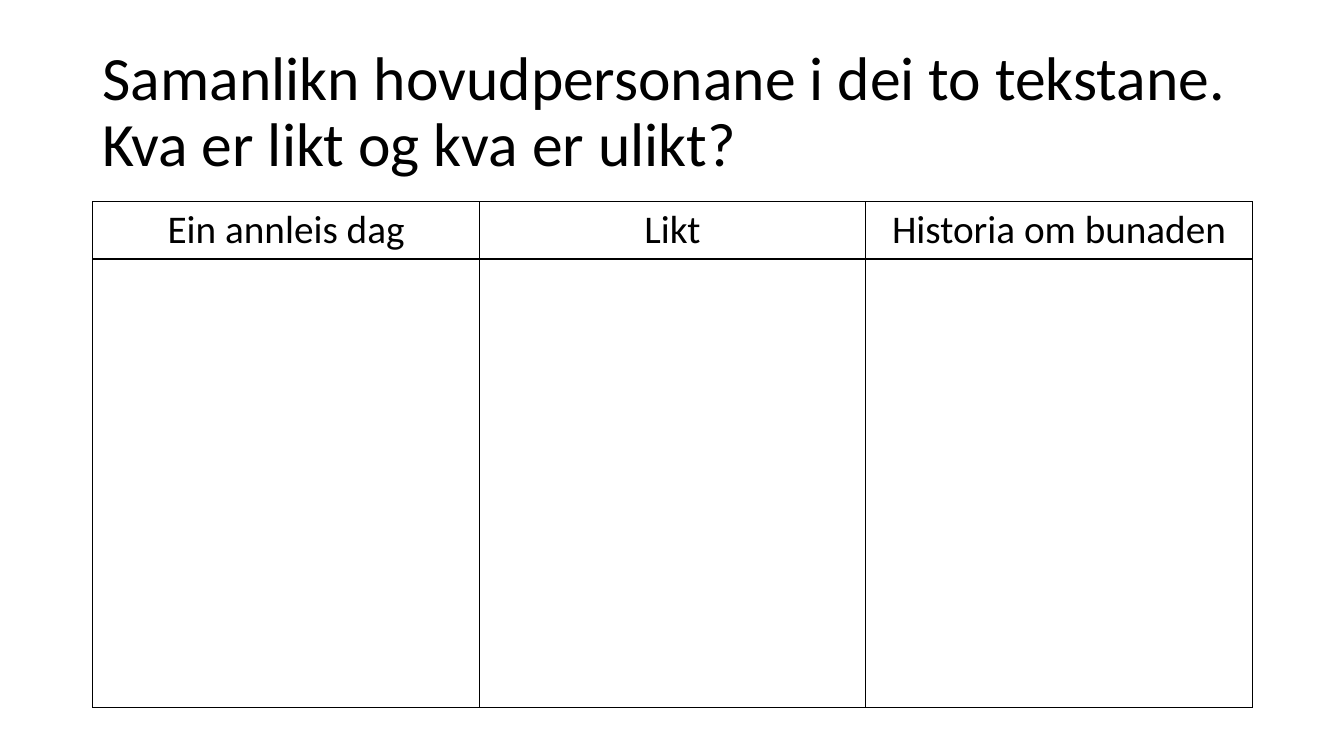
from pptx import Presentation
from pptx.dml.color import RGBColor
from pptx.enum.text import MSO_ANCHOR, PP_ALIGN
from pptx.oxml import parse_xml
from pptx.oxml.ns import nsdecls
from pptx.util import Inches, Pt

# Content
TITLE = "Samanlikn hovudpersonane i dei to tekstane.\vKva er likt og kva er ulikt?"
HEADERS = ["Ein annleis dag", "Likt", "Historia om bunaden"]

# Style and layout
FONT = "Calibri"
BLACK = RGBColor(0, 0, 0)
LEFT, WIDTH = 0.92, 11.5
TABLE_TOP = 2
ROW_HEIGHTS = [0.57, 4.45]


def style(p, size):
    p.font.name = FONT
    p.font.size = Pt(size)
    p.font.color.rgb = BLACK


def add_borders(cell):
    tcPr = cell._tc.get_or_add_tcPr()
    for side in ("lnL", "lnR", "lnT", "lnB"):
        tcPr.append(parse_xml(
            f'<a:{side} {nsdecls("a")} w="{Pt(1)}"><a:solidFill>'
            f'<a:srgbClr val="{BLACK}"/></a:solidFill></a:{side}>'))


prs = Presentation()
prs.slide_width, prs.slide_height = Inches(13.33), Inches(7.5)
s = prs.slides.add_slide(prs.slide_layouts[6])

# Title
tf = s.shapes.add_textbox(Inches(LEFT), Inches(0.4), Inches(WIDTH), Inches(1.45)).text_frame
tf.word_wrap = True
tf.vertical_anchor = MSO_ANCHOR.MIDDLE
p = tf.paragraphs[0]
p.text = TITLE
p.line_spacing = 0.9
style(p, 44)

# Comparison table
table = s.shapes.add_table(len(ROW_HEIGHTS), len(HEADERS), Inches(LEFT), Inches(TABLE_TOP),
                           Inches(WIDTH), Inches(sum(ROW_HEIGHTS))).table
table.first_row = table.horz_banding = False
for row, height in zip(table.rows, ROW_HEIGHTS):
    row.height = Inches(height)
for cell in table.iter_cells():
    add_borders(cell)
    cell.fill.background()
for col, header in enumerate(HEADERS):
    p = table.cell(0, col).text_frame.paragraphs[0]
    p.text = header
    p.alignment = PP_ALIGN.CENTER
    style(p, 28)

prs.save("out.pptx")
